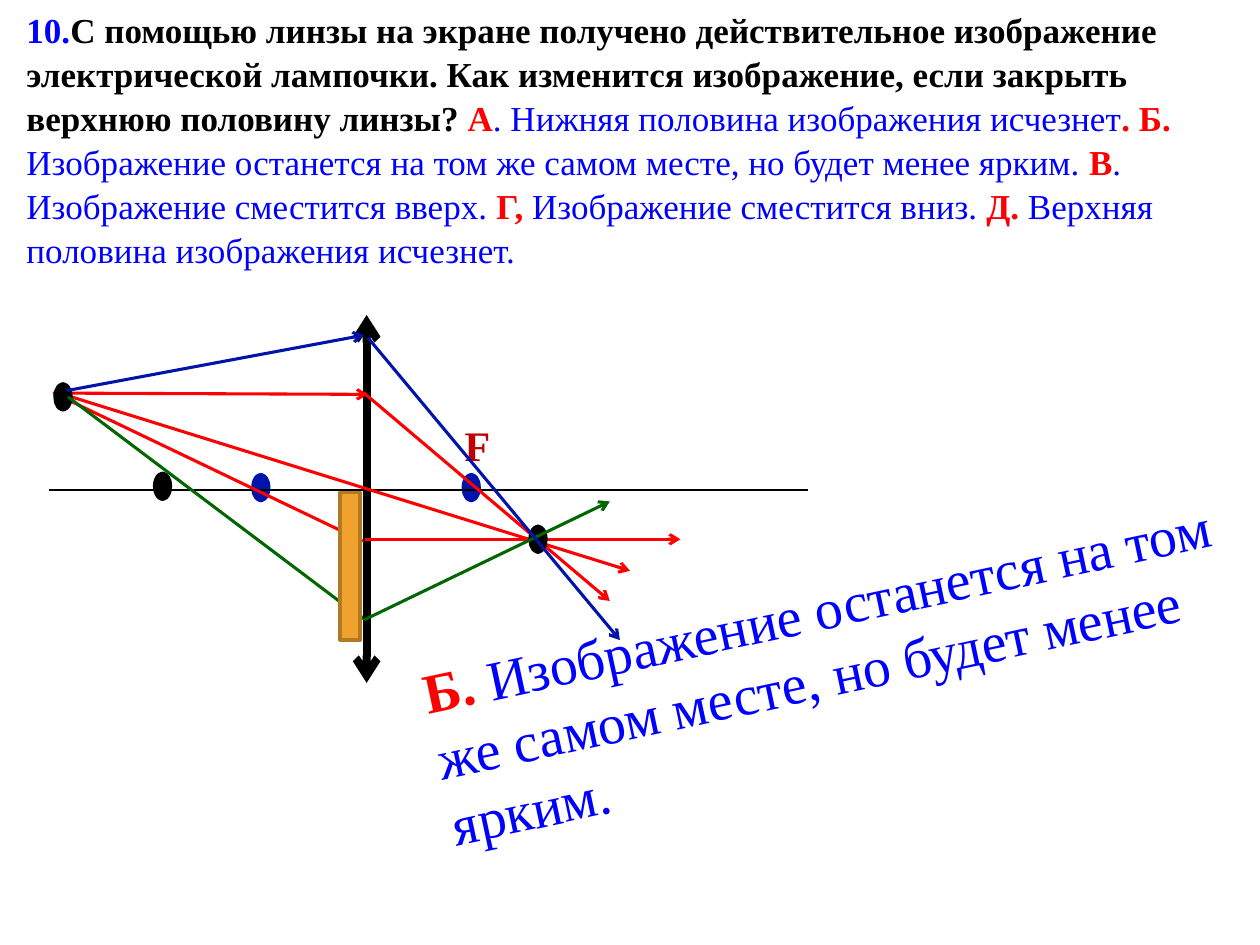
from lxml import etree
from pptx import Presentation
from pptx import util as u
from pptx.dml.color import RGBColor
from pptx.enum import shapes, text
from pptx.oxml.ns import qn

BLACK = RGBColor(0, 0, 0)
BLUE = RGBColor(0, 0, 0xFF)
RED = RGBColor(0xFF, 0, 0)
DARK_RED = RGBColor(0xC0, 0, 0)
NAVY = RGBColor(0, 0x14, 0xAC)
GREEN = RGBColor(0, 0x66, 0)
ORANGE = RGBColor(0xF0, 0xA2, 0x2E)
BROWN = RGBColor(0xB2, 0x78, 0x22)


class LensSlide:
    """Holds the style and the slide being drawn."""
    font_name = "Times New Roman"
    ray_width = 1.75
    point_size = (0.08, 0.16)

    def __init__(self, slide):
        self.slide = slide

    def add_runs(self, shape, runs, size):
        """Fill a shape with one paragraph of (text, colour, bold) runs."""
        frame = shape.text_frame
        frame.word_wrap = True
        frame.auto_size = text.MSO_AUTO_SIZE.NONE
        frame.vertical_anchor = text.MSO_ANCHOR.TOP
        paragraph = frame.paragraphs[0]
        paragraph.alignment = text.PP_ALIGN.LEFT
        for content, colour, bold in runs:
            run = paragraph.add_run()
            run.text = content
            run.font.name = self.font_name
            run.font.size = u.Pt(size)
            run.font.bold = bold
            run.font.color.rgb = colour
        return paragraph

    def question(self, box, runs, size):
        title = self.slide.shapes.title
        title.left, title.top, title.width, title.height = map(u.Inches, box)
        paragraph = self.add_runs(title, runs, size)
        paragraph.line_spacing = 1.05
        paragraph._p.get_or_add_pPr().set("marL", str(u.Inches(0.5)))

    def label(self, box, runs, size, rotation=0):
        shape = self.slide.shapes.add_textbox(*map(u.Inches, box))
        shape.rotation = rotation
        self.add_runs(shape, runs, size)

    def line(self, start, end, colour, width, ends=()):
        connector = self.slide.shapes.add_connector(
            shapes.MSO_CONNECTOR.STRAIGHT, *map(u.Inches, start + end))
        connector.line.color.rgb = colour
        connector.line.width = u.Pt(width)
        outline = connector.line._get_or_add_ln()
        for end_name in ends:
            etree.SubElement(outline, qn("a:" + end_name), type="arrow")
        etree.SubElement(connector._element.spPr, qn("a:effectLst"))

    def ray(self, start, end, colour):
        self.line(start, end, colour, self.ray_width, ["tailEnd"])

    def shape(self, kind, box, fill, outline, width):
        shape = self.slide.shapes.add_shape(kind, *map(u.Inches, box))
        shape.shadow.inherit = False
        shape.fill.solid()
        shape.fill.fore_color.rgb = fill
        shape.line.color.rgb = outline
        shape.line.width = u.Pt(width)

    def point(self, left, top, colour):
        self.shape(shapes.MSO_SHAPE.OVAL, (left, top, *self.point_size),
                   colour, colour, 5.25)


def main():
    presentation = Presentation()
    presentation.slide_width = u.Inches(10)
    presentation.slide_height = u.Inches(7.5)
    drawing = LensSlide(presentation.slides.add_slide(presentation.slide_layouts[5]))

    # Question with the answer options
    drawing.question((-0.39, 0, 10.39, 2.03), [
        ("10.", BLUE, True),
        ("С помощью линзы на экране получено действительное изображение "
         "электрической лампочки. Как изменится изображение, если закрыть "
         "верхнюю половину линзы?", BLACK, True),
        (" А", RED, True),
        (". Нижняя половина изображения исчезнет", BLUE, False),
        (". Б.", RED, True),
        (" Изображение останется на том же самом месте, но будет менее ярким. ",
         BLUE, False),
        ("В", RED, True),
        (". Изображение сместится вверх. ", BLUE, False),
        ("Г,", RED, True),
        (" Изображение сместится вниз. ", BLUE, False),
        ("Д.", RED, True),
        (" Верхняя половина изображения исчезнет.", BLUE, False),
    ], 20)

    # Tilted answer
    drawing.label((3.31, 4.5, 6.59, 1.72), [
        ("Б.", RED, True),
        (" Изображение останется на том же самом месте, но будет менее ярким.",
         BLUE, False),
    ], 32, rotation=347.9)

    # Lens, focal points and optical axis
    drawing.line((2.91, 2.5), (2.91, 5.42), BLACK, 4.5, ["headEnd", "tailEnd"])
    for left, top, colour in [(2.03, 3.79, NAVY), (3.7, 3.79, NAVY),
                              (1.25, 3.78, BLACK)]:
        drawing.point(left, top, colour)
    drawing.line((0.39, 3.89), (6.41, 3.89), BLACK, 0.79)

    # Main rays
    for start, end in [((0.42, 3.12), (2.92, 3.13)),
                       ((2.89, 3.12), (4.84, 4.77)),
                       ((0.49, 3.15), (2.89, 4.3)),
                       ((2.9, 4.28), (5.4, 4.28)),
                       ((0.47, 3.12), (5, 4.53))]:
        drawing.ray(start, end, RED)
    drawing.label((3.59, 3.28, 0.47, 0.5), [("F", DARK_RED, True)], 24)

    # Lamp and its image
    drawing.point(0.46, 3.07, BLACK)
    drawing.point(4.23, 4.2, BLACK)

    # Lower rays, the screen covering half of the lens, upper rays
    drawing.ray((0.54, 3.15), (2.89, 4.92), GREEN)
    drawing.ray((2.89, 4.92), (4.84, 3.98), GREEN)
    drawing.shape(shapes.MSO_SHAPE.RECTANGLE, (2.7, 3.91, 0.16, 1.17),
                  ORANGE, BROWN, 2)
    drawing.ray((0.53, 3.1), (2.89, 2.66), NAVY)
    drawing.ray((2.92, 2.68), (4.92, 5.08), NAVY)

    presentation.save("out.pptx")


if __name__ == "__main__":
    main()
